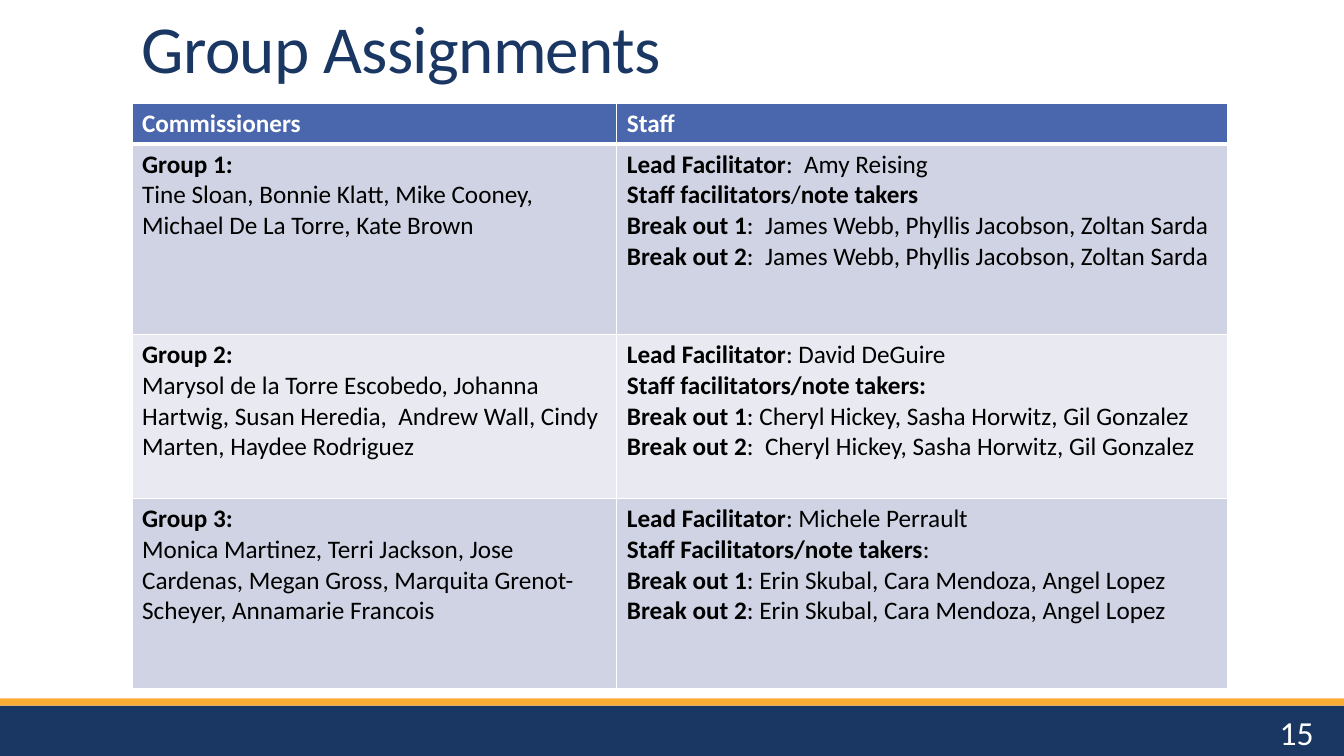
from dataclasses import dataclass

from lxml.etree import SubElement
from pptx import Presentation
from pptx.dml.color import RGBColor
from pptx.enum.shapes import MSO_SHAPE
from pptx.enum.text import MSO_ANCHOR, PP_ALIGN
from pptx.oxml.ns import qn
from pptx.slide import Slide
from pptx.table import _Cell
from pptx.text.text import TextFrame, _Paragraph, _Run
from pptx.util import Pt

COLORS = {
    "navy": "1A3763",
    "gold": "FAAC35",
    "header": "4A66AC",
    "odd_row": "D0D3E3",
    "even_row": "E9EAF1",
    "white": "FFFFFF",
    "black": "000000",
}
FONT = "Calibri"
SLIDE_WIDTH, SLIDE_HEIGHT = 960, 540
TABLE_LEFT, TABLE_TOP = 94.32, 74.16
COLUMN_WIDTHS = (346.32, 436.32)
HEADINGS = ("Commissioners", "Staff")
HEADER_HEIGHT = 28.8


@dataclass(frozen=True)
class Box:
    left: float
    top: float
    width: float
    height: float

    def points(self) -> tuple[Pt, Pt, Pt, Pt]:
        return Pt(self.left), Pt(self.top), Pt(self.width), Pt(self.height)


@dataclass(frozen=True)
class Group:
    """Text for one table row; note_takers alternates bold and regular pieces."""

    name: str
    commissioners: str
    lead: str
    note_takers: tuple[str, ...]
    breakouts: tuple[str, str]
    height: float
    fill: str


GROUPS = (
    Group(
        "Group 1:",
        "Tine Sloan, Bonnie Klatt, Mike Cooney, Michael De La Torre, Kate Brown",
        ":  Amy Reising",
        ("Staff facilitators", "/", "note takers"),
        (
            ":  James Webb, Phyllis Jacobson, Zoltan Sarda  ",
            ":  James Webb, Phyllis Jacobson, Zoltan Sarda",
        ),
        136.08,
        "odd_row",
    ),
    Group(
        "Group 2:",
        "Marysol de la Torre Escobedo, Johanna Hartwig, Susan Heredia,  "
        "Andrew Wall, Cindy Marten, Haydee Rodriguez",
        ": David DeGuire",
        ("Staff facilitators/note takers:",),
        (
            ": Cheryl Hickey, Sasha Horwitz, Gil Gonzalez",
            ":  Cheryl Hickey, Sasha Horwitz, Gil Gonzalez",
        ),
        117,
        "even_row",
    ),
    Group(
        "Group 3:",
        "Monica Martinez, Terri Jackson, Jose Cardenas, Megan Gross, "
        "Marquita Grenot-Scheyer, Annamarie Francois",
        ": Michele Perrault",
        ("Staff Facilitators/note takers", ":"),
        (": Erin Skubal, Cara Mendoza, Angel Lopez",) * 2,
        136.08,
        "odd_row",
    ),
)


def rgb(name: str) -> RGBColor:
    return RGBColor.from_string(COLORS[name])


def add_run(
    paragraph: _Paragraph, text: str, size: float, color: str, bold: bool = False
) -> _Run:
    run = paragraph.add_run()
    run.text = text
    run.font.name = FONT
    run.font.size = Pt(size)
    run.font.bold = bold
    run.font.color.rgb = rgb(color)
    return run


def add_bar(slide: Slide, box: Box, color: str) -> None:
    shape = slide.shapes.add_shape(MSO_SHAPE.RECTANGLE, *box.points())
    shape.shadow.inherit = False
    shape.fill.solid()
    shape.fill.fore_color.rgb = rgb(color)
    shape.line.fill.background()


def add_text_frame(slide: Slide, box: Box, anchor: MSO_ANCHOR) -> TextFrame:
    frame = slide.shapes.add_textbox(*box.points()).text_frame
    frame.word_wrap = True
    frame.vertical_anchor = anchor
    return frame


def add_title(slide: Slide) -> None:
    frame = add_text_frame(slide, Box(94.32, -46.8, 792, 112.32), MSO_ANCHOR.BOTTOM)
    paragraph = frame.paragraphs[0]
    paragraph.line_spacing = 0.85
    run = add_run(paragraph, "Group Assignments", 48, "navy")
    run._r.get_or_add_rPr().set("spc", "-50")


def add_slide_number(slide: Slide) -> None:
    frame = add_text_frame(slide, Box(842.4, 508.32, 102.96, 28.8), MSO_ANCHOR.MIDDLE)
    paragraph = frame.paragraphs[0]
    paragraph.alignment = PP_ALIGN.RIGHT
    add_run(paragraph, "15", 24, "white")


def style_cell(cell: _Cell, fill: str, top: float, bottom: float) -> None:
    """Draw white borders, then fill, in the order the file format asks for."""
    properties = cell._tc.get_or_add_tcPr()
    for side, width in (("L", 1), ("R", 1), ("T", top), ("B", bottom)):
        line = SubElement(properties, qn(f"a:ln{side}"), w=str(Pt(width)))
        solid = SubElement(line, qn("a:solidFill"))
        SubElement(solid, qn("a:srgbClr"), val=COLORS["white"])
    cell.fill.solid()
    cell.fill.fore_color.rgb = rgb(fill)


def write_cell(cell: _Cell, lines: list[tuple[str, ...]], color: str) -> None:
    """Write one paragraph per line, its pieces alternating bold and regular."""
    for index, pieces in enumerate(lines):
        frame = cell.text_frame
        paragraph = frame.add_paragraph() if index else frame.paragraphs[0]
        for position, text in enumerate(pieces):
            if text:
                add_run(paragraph, text, 18, color, bold=position % 2 == 0)


def add_assignments(slide: Slide) -> None:
    heights = [HEADER_HEIGHT] + [group.height for group in GROUPS]
    box = Box(TABLE_LEFT, TABLE_TOP, sum(COLUMN_WIDTHS), sum(heights))
    table = slide.shapes.add_table(
        len(heights), len(COLUMN_WIDTHS), *box.points()
    ).table
    table.horz_banding = False
    for column, width in zip(table.columns, COLUMN_WIDTHS):
        column.width = Pt(width)
    for row, height in zip(table.rows, heights):
        row.height = Pt(height)

    for column, heading in enumerate(HEADINGS):
        cell = table.cell(0, column)
        style_cell(cell, "header", top=1, bottom=3)
        write_cell(cell, [(heading,)], "white")

    for row, group in enumerate(GROUPS, start=1):
        staff = [("Lead Facilitator", group.lead), group.note_takers]
        for number, names in enumerate(group.breakouts, start=1):
            staff.append((f"Break out {number}", names))
        commissioners = [(group.name,), ("", group.commissioners)]
        for column, lines in enumerate((commissioners, staff)):
            cell = table.cell(row, column)
            style_cell(cell, group.fill, top=3 if row == 1 else 1, bottom=1)
            write_cell(cell, lines, "black")


def main() -> None:
    presentation = Presentation()
    presentation.slide_width = Pt(SLIDE_WIDTH)
    presentation.slide_height = Pt(SLIDE_HEIGHT)
    slide = presentation.slides.add_slide(presentation.slide_layouts[6])
    add_bar(slide, Box(0, 504, SLIDE_WIDTH, 36), "navy")
    add_bar(slide, Box(0, 498.96, SLIDE_WIDTH, 5.04), "gold")
    add_title(slide)
    add_assignments(slide)
    add_slide_number(slide)
    presentation.save("out.pptx")


if __name__ == "__main__":
    main()
